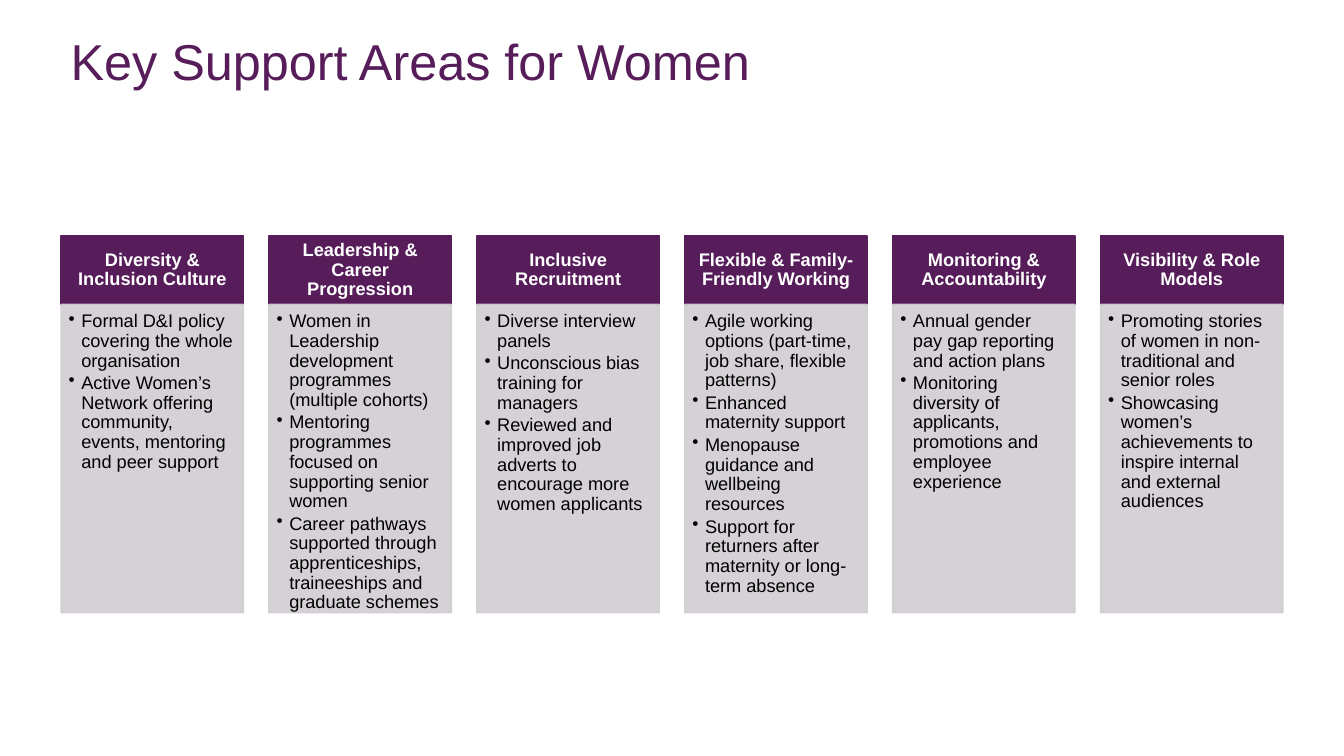
import pptx
import pptx.util
import pptx.dml.color
import pptx.enum.shapes
import pptx.enum.text
import pptx.oxml.ns
import lxml.etree

Pt = pptx.util.Pt
RGB = pptx.dml.color.RGBColor
ALIGN = pptx.enum.text.PP_ALIGN
ANCHOR = pptx.enum.text.MSO_ANCHOR
qn = pptx.oxml.ns.qn

PURPLE = RGB(0x56, 0x1D, 0x5A)
GREY = RGB(0xD1, 0xCD, 0xD2)
WHITE = RGB(0xFF, 0xFF, 0xFF)
BLACK = RGB(0x00, 0x00, 0x00)

LEFT, TOP, STEP = 43.6, 168.7, 148.5
WIDTH, HEAD, BODY = 130.3, 48.7, 220.3

AREAS = [
    ("Diversity & Inclusion Culture", [
        "Formal D&I policy covering the whole organisation",
        "Active Women’s Network offering community, events, mentoring and peer support"]),
    ("Leadership & Career Progression", [
        "Women in Leadership development programmes (multiple cohorts)",
        "Mentoring programmes focused on supporting senior women",
        "Career pathways supported through apprenticeships, traineeships and graduate schemes"]),
    ("Inclusive Recruitment", [
        "Diverse interview panels",
        "Unconscious bias training for managers",
        "Reviewed and improved job adverts to encourage more women applicants"]),
    ("Flexible & Family-Friendly Working", [
        "Agile working options (part-time, job share, flexible patterns)",
        "Enhanced maternity support",
        "Menopause guidance and wellbeing resources",
        "Support for returners after maternity or long-term absence"]),
    ("Monitoring & Accountability", [
        "Annual gender pay gap reporting and action plans",
        "Monitoring diversity of applicants, promotions and employee experience"]),
    ("Visibility & Role Models", [
        "Promoting stories of women in non-traditional and senior roles",
        "Showcasing women’s achievements to inspire internal and external audiences"]),
]


def add_dot(para):
    """Give a paragraph a hanging bullet."""
    props = para._p.get_or_add_pPr()
    props.set("marL", str(Pt(9)))
    props.set("indent", str(Pt(-9)))
    lxml.etree.SubElement(props, qn("a:buChar")).set("char", "•")


def write(shape, lines, size=13, color=BLACK, bold=False, align=ALIGN.LEFT,
          anchor=ANCHOR.TOP, inset=(7.2, 3.6, 7.2, 3.6), after=0, dots=False):
    """Fill a shape with formatted paragraphs."""
    frame = shape.text_frame
    frame.word_wrap = True
    frame.auto_size = pptx.enum.text.MSO_AUTO_SIZE.NONE
    frame.vertical_anchor = anchor
    (frame.margin_left, frame.margin_top,
     frame.margin_right, frame.margin_bottom) = map(Pt, inset)
    for i, line in enumerate(lines):
        para = frame.paragraphs[0] if i == 0 else frame.add_paragraph()
        if dots:
            add_dot(para)
        para.alignment = align
        para.line_spacing = 0.9
        para.space_before = Pt(0)
        para.space_after = Pt(after)
        run = para.add_run()
        run.text = line
        run.font.name = "Arial"
        run.font.size = Pt(size)
        run.font.bold = bold
        run.font.color.rgb = color


def add_box(slide, left, top, height, color, alpha=100):
    """Add a plain rectangle of column width."""
    box = slide.shapes.add_shape(
        pptx.enum.shapes.MSO_SHAPE.RECTANGLE,
        Pt(left), Pt(top), Pt(WIDTH), Pt(height))
    box.shadow.inherit = False
    box.fill.solid()
    box.fill.fore_color.rgb = color
    box.line.color.rgb = color
    box.line.width = Pt(1)
    if alpha < 100:
        for tint in box._element.spPr.iter(qn("a:srgbClr")):
            lxml.etree.SubElement(tint, qn("a:alpha")).set("val", str(alpha * 1000))
    return box


def add_area(slide, left, name, points):
    """Add one column with its heading and bullets."""
    head = add_box(slide, left, TOP, HEAD, PURPLE)
    write(head, [name], color=WHITE, bold=True, align=ALIGN.CENTER,
          anchor=ANCHOR.MIDDLE, inset=(7.2, 4.1, 7.2, 4.1))
    body = add_box(slide, left, TOP + HEAD, BODY, GREY, alpha=90)
    write(body, points, inset=(5.5, 5.5, 7.3, 8.2), after=2, dots=True)


def add_title(slide, text):
    """Place and format the slide title."""
    title = slide.shapes.title
    title.left, title.top, title.width, title.height = map(Pt, (43.2, 0, 811.4, 91.4))
    write(title, [text], size=36, color=PURPLE, anchor=ANCHOR.MIDDLE)


def main():
    """Build and save the slide."""
    deck = pptx.Presentation()
    deck.slide_width, deck.slide_height = Pt(960), Pt(540)
    slide = deck.slides.add_slide(deck.slide_layouts[5])
    add_title(slide, "Key Support Areas for Women")
    for i, (name, points) in enumerate(AREAS):
        add_area(slide, LEFT + i * STEP, name, points)
    deck.save("out.pptx")


if __name__ == "__main__":
    main()
